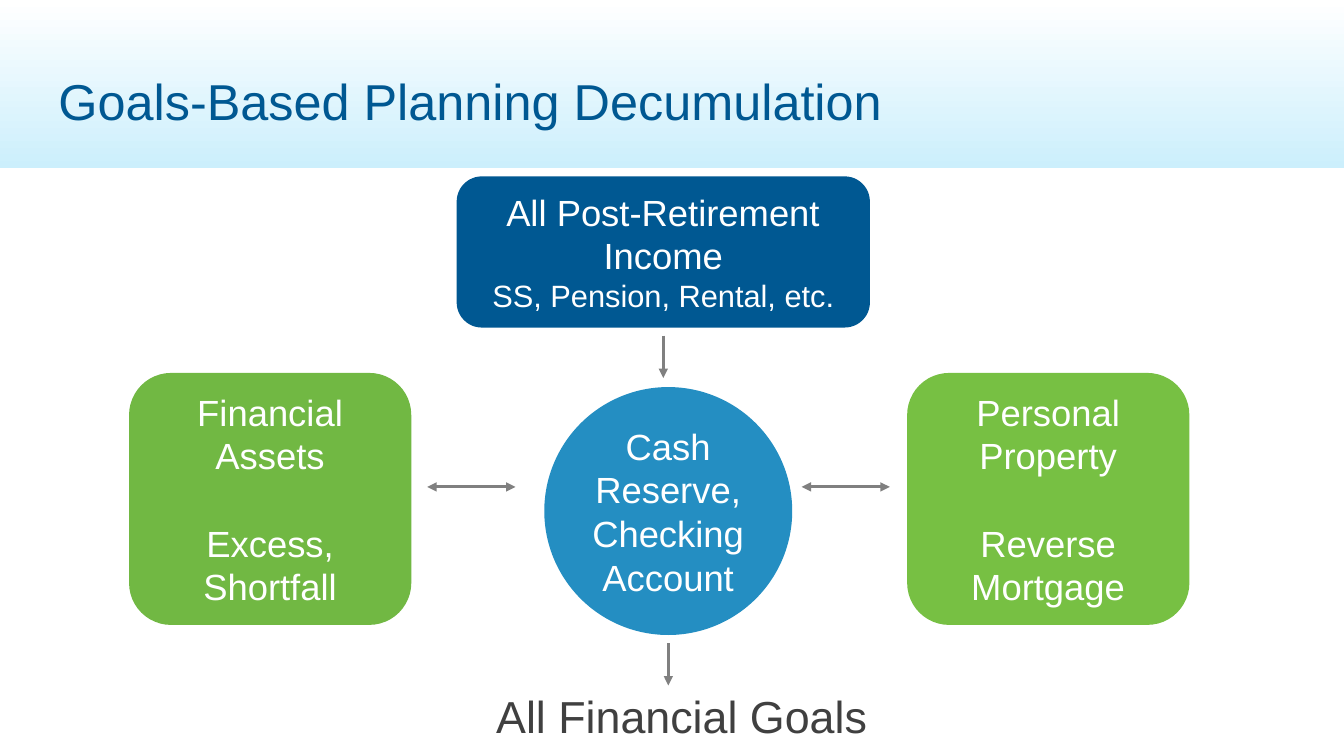
from lxml import etree
from pptx import Presentation
from pptx.dml.color import RGBColor
from pptx.enum.shapes import MSO_CONNECTOR, MSO_SHAPE
from pptx.enum.text import MSO_ANCHOR, PP_ALIGN
from pptx.oxml.ns import qn
from pptx.util import Pt

RECT, ROUNDED, CIRCLE = MSO_SHAPE.RECTANGLE, MSO_SHAPE.ROUNDED_RECTANGLE, MSO_SHAPE.OVAL
STRAIGHT = MSO_CONNECTOR.STRAIGHT
LEFT, CENTER = PP_ALIGN.LEFT, PP_ALIGN.CENTER
TOP, MIDDLE = MSO_ANCHOR.TOP, MSO_ANCHOR.MIDDLE

WHITE = RGBColor(0xFF, 0xFF, 0xFF)
SKY = RGBColor(0xCC, 0xEF, 0xFC)
NAVY = RGBColor(0x00, 0x58, 0x92)
BLUE = RGBColor(0x24, 0x8E, 0xC2)
GREEN = RGBColor(0x71, 0xB8, 0x43)
LIME = RGBColor(0x77, 0xC0, 0x43)
GRAY = RGBColor(0x80, 0x80, 0x80)
DARK = RGBColor(0x40, 0x40, 0x40)

# Content: each line is (text, size, space before)
TITLE = [("Goals-Based Planning Decumulation", 36, 0)]
GOALS = [("All Financial Goals", 32, 0)]
INCOME = [("All Post-Retirement", 26, 0), ("Income", 26, 0),
          ("SS, Pension, Rental, etc.", 22, 0)]
ASSETS = [("Financial Assets", 26, 0), ("Excess, Shortfall", 26, 31)]
PROPERTY = [("Personal", 26, 0), ("Property", 26, 0),
            ("Reverse", 26, 31), ("Mortgage", 26, 0)]
RESERVE = [("Cash Reserve,", 26, 0), ("Checking Account", 26, 0)]

# Layout in points
BAND_HEIGHT = 120
SIDE_TOP, SIDE_WIDTH, SIDE_HEIGHT = 266.4, 201.6, 180
CIRCLE_SIZE = 177.1
SIDE_ARROW_Y, SIDE_ARROW, DOWN_ARROW = 347.8, 63, 30.2

NODES = [
    (ROUNDED, (326.2, 126, 295.2, 108), NAVY, INCOME),
    (ROUNDED, (92.2, SIDE_TOP, SIDE_WIDTH, SIDE_HEIGHT), GREEN, ASSETS),
    (ROUNDED, (648, SIDE_TOP, SIDE_WIDTH, SIDE_HEIGHT), LIME, PROPERTY),
    (CIRCLE, (388.8, 276.5, CIRCLE_SIZE, CIRCLE_SIZE), BLUE, RESERVE),
]
# Start x, start y, width, height, arrowheads
TWO_WAY, ONE_WAY = ("headEnd", "tailEnd"), ("tailEnd",)
ARROWS = [
    (305.2, SIDE_ARROW_Y, SIDE_ARROW, 0, TWO_WAY),
    (572.6, SIDE_ARROW_Y, SIDE_ARROW, 0, TWO_WAY),
    (473.8, 239.8, 0, DOWN_ARROW, ONE_WAY),
    (477.4, 459.4, 0, DOWN_ARROW, ONE_WAY),
]


def write(frame, lines, color, align, anchor, spacing=1.0):
    frame.word_wrap = True
    frame.vertical_anchor = anchor
    for i, (text, size, before) in enumerate(lines):
        paragraph = frame.paragraphs[0] if i == 0 else frame.add_paragraph()
        layout = {"alignment": align, "line_spacing": spacing, "space_before": Pt(before)}
        for key, value in layout.items():
            setattr(paragraph, key, value)
        run = paragraph.add_run()
        run.text = text
        for key, value in {"name": "Arial", "size": Pt(size)}.items():
            setattr(run.font, key, value)
        run.font.color.rgb = color


def add_block(slide, kind, box):
    block = slide.shapes.add_shape(kind, *map(Pt, box))
    block.shadow.inherit = False
    block.line.fill.background()
    return block


def add_arrow(slide, x, y, width, height, heads):
    arrow = slide.shapes.add_connector(STRAIGHT, Pt(x), Pt(y), Pt(x + width), Pt(y + height))
    arrow.line.color.rgb = GRAY
    arrow.line.width = Pt(2.25)
    properties = arrow.element.spPr
    for head in heads:
        etree.SubElement(properties.find(qn("a:ln")), qn("a:" + head), type="triangle")
    etree.SubElement(properties, qn("a:effectLst"))


def main():
    prs = Presentation()
    prs.slide_width, prs.slide_height = Pt(960), Pt(540)
    slide = prs.slides.add_slide(prs.slide_layouts[6])

    # Header band and title
    band = add_block(slide, RECT, (0, 0, 960, BAND_HEIGHT))
    band.fill.gradient()
    band.fill.gradient_angle = 270
    for stop, color in zip(band.fill.gradient_stops, (WHITE, SKY)):
        stop.color.rgb = color
    title = slide.shapes.add_textbox(Pt(41.8), Pt(28.8), Pt(765.4), Pt(91.4)).text_frame
    title.margin_left = title.margin_right = 0
    write(title, TITLE, NAVY, LEFT, MIDDLE, 0.9)

    # Sources of money around the cash reserve
    for kind, box, color, lines in NODES:
        node = add_block(slide, kind, box)
        node.fill.solid()
        node.fill.fore_color.rgb = color
        write(node.text_frame, lines, WHITE, CENTER, MIDDLE)

    # Flows
    for arrow in ARROWS:
        add_arrow(slide, *arrow)

    # Goals
    goals = slide.shapes.add_textbox(Pt(247), Pt(488.2), Pt(480.2), Pt(46))
    write(goals.text_frame, GOALS, DARK, CENTER, TOP)

    prs.save("out.pptx")


if __name__ == "__main__":
    main()
